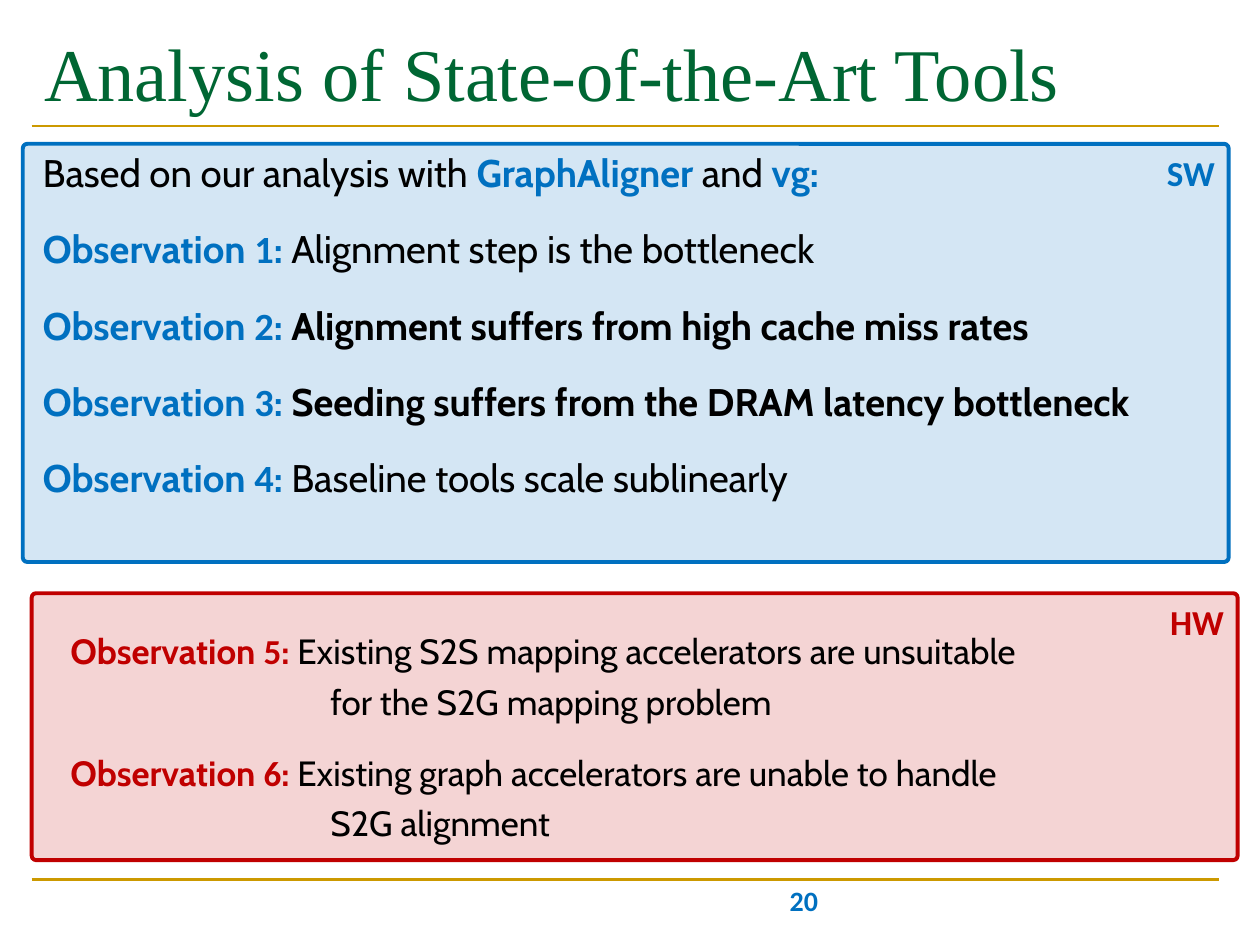
from lxml import etree
from pptx import Presentation
from pptx.dml.color import RGBColor
from pptx.enum.shapes import MSO_CONNECTOR, MSO_SHAPE
from pptx.enum.text import MSO_ANCHOR as Anchor, PP_ALIGN as Align
from pptx.oxml.ns import qn
from pptx.util import Cm, Pt

BLUE = RGBColor(0x00, 0x70, 0xC0)
RED = RGBColor(0xC0, 0x00, 0x00)
GREEN = RGBColor(0x00, 0x66, 0x33)
GOLD = RGBColor(0xCC, 0x99, 0x00)
BLACK = RGBColor(0, 0, 0)

INDENT = 0.53        # left margin of observations, cm
HANGING = 5.77       # left margin of their second lines, cm


def add_run(p, text, *, size, color, font="Cabin", bold=False):
    r = p.add_run()
    r.text = text
    r.font.name = font
    r.font.size = Pt(size)
    r.font.bold = bold
    r.font.color.rgb = color


def add_textbox(slide, x, y, w, h, anchor=Anchor.TOP):
    tf = slide.shapes.add_textbox(Cm(x), Cm(y), Cm(w), Cm(h)).text_frame
    tf.word_wrap = True
    tf.vertical_anchor = anchor
    return tf


def add_line(p, margin=INDENT, after=12):
    """Format one line of a panel's text."""
    p.line_spacing = 1.2
    p.space_after = Pt(after)
    p._p.get_or_add_pPr().set("marL", str(Cm(margin)))
    return p


def add_observation(tf, number, lines, *, size, color, bold=False, first=False):
    """Numbered label and statement; later lines hang under the statement."""
    for i, line in enumerate(lines):
        p = tf.paragraphs[0] if first and i == 0 else tf.add_paragraph()
        add_line(p, HANGING if i else INDENT, 12 if i == len(lines) - 1 else 0)
        if i == 0:
            add_run(p, "Observation ", size=size, color=color, bold=True)
            add_run(p, str(number), size=size, color=color, bold=True, font="Calibri")
            add_run(p, ": ", size=size, color=color, bold=True)
        add_run(p, line, size=size, color=BLACK, bold=bold)


def add_panel(slide, x, y, w, h, label, color, radius):
    """Tinted rounded panel with its label at the top right."""
    sp = slide.shapes.add_shape(MSO_SHAPE.ROUNDED_RECTANGLE, Cm(x), Cm(y), Cm(w), Cm(h))
    sp.adjustments[0] = radius
    sp.shadow.inherit = False
    sp.fill.solid()
    sp.fill.fore_color.rgb = color
    clr = sp._element.spPr.find(qn("a:solidFill")).find(qn("a:srgbClr"))
    etree.SubElement(clr, qn("a:alpha")).set("val", "17000")
    sp.line.color.rgb = color
    sp.line.width = Pt(2.25)
    tf = sp.text_frame
    tf.vertical_anchor = Anchor.TOP
    p = tf.paragraphs[0]
    p.alignment = Align.RIGHT
    add_run(p, label, size=20, color=color, font="Calibri", bold=True)


def add_frame(slide, x, w):
    """Rules, title and page number."""
    for y in (2.54, 17.73):
        rule = slide.shapes.add_connector(MSO_CONNECTOR.STRAIGHT, Cm(x), Cm(y), Cm(x + w), Cm(y))
        rule.line.color.rgb = GOLD
        rule.line.width = Pt(1.5)
        etree.SubElement(rule._element.spPr, qn("a:effectLst"))
    tf = add_textbox(slide, x, 0.43, w, 2.97)
    add_run(tf.paragraphs[0], "Analysis of State-of-the-Art Tools",
            size=42.5, color=GREEN, font="Times New Roman")
    tf = add_textbox(slide, x + 8.05, 17.35, 8.05, 1.27, Anchor.BOTTOM)
    tf.paragraphs[0].alignment = Align.RIGHT
    add_run(tf.paragraphs[0], "20", size=16, color=BLUE, font="Calibri", bold=True)


def add_software(slide, x, y, w, h):
    add_panel(slide, x, y, w, h, "SW", BLUE, 0.011)
    tf = add_textbox(slide, x - 0.13, y - 0.21, w + 0.25, 7.59)
    tf.margin_left = tf.margin_right = 0
    p = add_line(tf.paragraphs[0])
    for text, named in (("Based on our analysis with ", False), ("GraphAligner ", True),
                        ("and", False), (" vg:", True)):
        add_run(p, text, size=22, color=BLUE if named else BLACK, bold=named)
    observations = (
        ("Alignment step is the bottleneck", False),
        ("Alignment suffers from high cache miss rates", True),
        ("Seeding suffers from the DRAM latency bottleneck", True),
        ("Baseline tools scale sublinearly", False),
    )
    for n, (text, bold) in enumerate(observations, 1):
        add_observation(tf, n, [text], size=22, color=BLUE, bold=bold)


def add_hardware(slide, x, y, w, h):
    add_panel(slide, x, y, w, h, "HW", RED, 0.016)
    tf = add_textbox(slide, x, y + 0.44, w - 0.38, h - 0.71)
    observations = (
        ("Existing S2S mapping accelerators are unsuitable", "for the S2G mapping problem"),
        ("Existing graph accelerators are unable to handle", "S2G alignment"),
    )
    for n, lines in enumerate(observations, 5):
        add_observation(tf, n, lines, size=20, color=RED, first=n == 5)


def main():
    prs = Presentation()
    prs.slide_width, prs.slide_height = Cm(25.4), Cm(19.05)
    slide = prs.slides.add_slide(prs.slide_layouts[6])
    add_frame(slide, 0.64, 23.93)
    add_software(slide, 0.46, 2.9, 24.31, 8.43)
    add_hardware(slide, 0.64, 11.96, 24.31, 5.38)
    prs.save("out.pptx")


if __name__ == "__main__":
    main()
